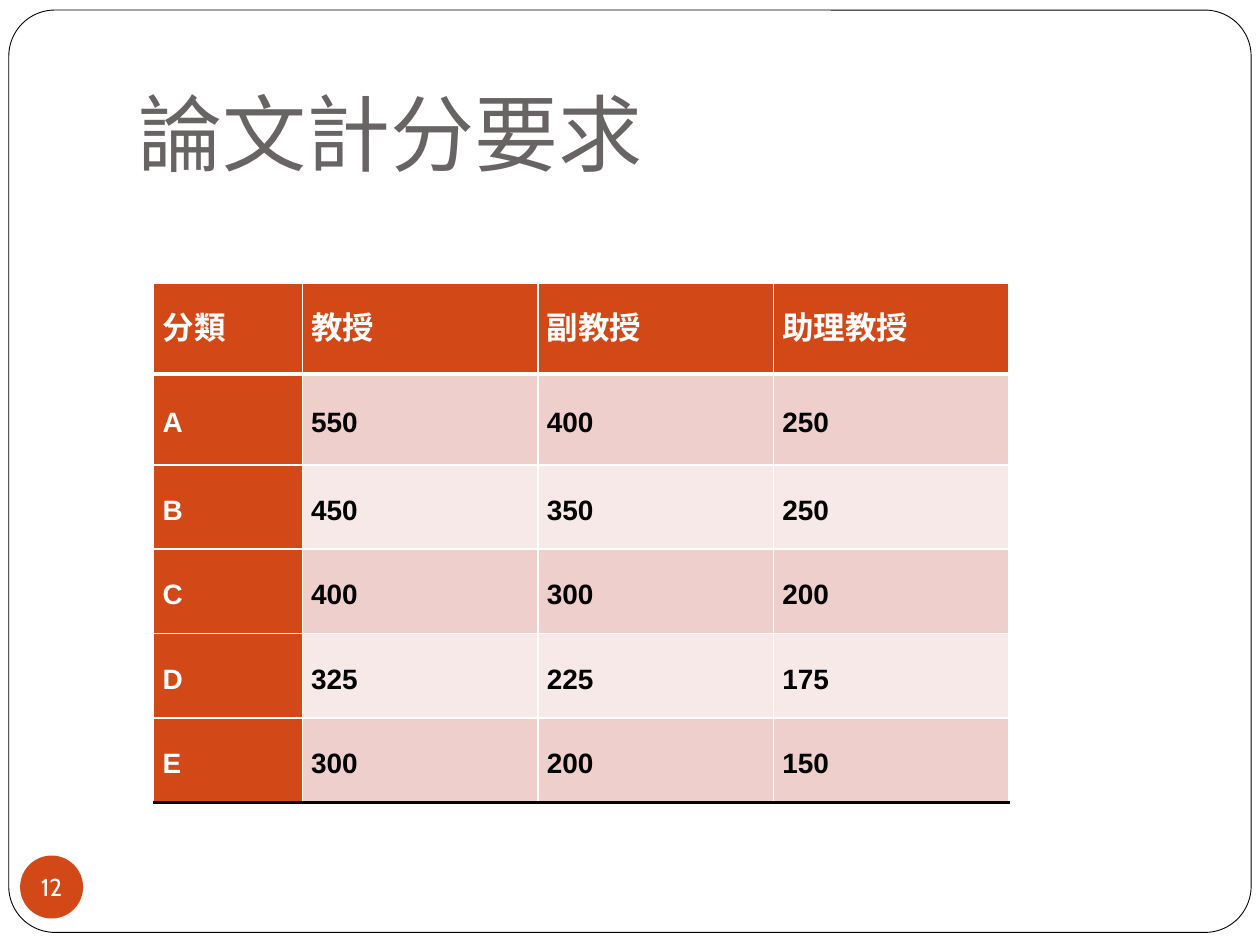
from dataclasses import dataclass

from lxml import etree
from pptx import Presentation, util as u
from pptx.dml.color import RGBColor
from pptx.enum import shapes, text
from pptx.oxml import ns


@dataclass(frozen=True)
class Theme:
    white: str = "FFFFFF"
    black: str = "000000"
    grey: str = "696464"
    accent: str = "D34817"
    bands: tuple = ("EFCFCC", "F7E9E8")
    heading_font: str = "Cabin"
    table_font: str = "Arial"
    title_size: int = 48
    header_size: int = 18
    body_size: int = 16
    number_size: int = 14
    line_spacing: int = 22
    thin: float = 1
    closing: float = 1.5
    thick: float = 3


THEME = Theme()
SCORES = [
    ("分類", "教授", "副教授", "助理教授"),
    ("A", 550, 400, 250),
    ("B", 450, 350, 250),
    ("C", 400, 300, 200),
    ("D", 325, 225, 175),
    ("E", 300, 200, 150),
]
COLUMN_WIDTHS = (1.18, 1.87, 1.87, 1.87)
ROW_HEIGHTS = (0.72, 0.72, 0.67, 0.67, 0.67, 0.67)


def inches(box):
    return [u.Inches(length) for length in box]


def apply(target, values):
    for name, value in values.items():
        setattr(target, name, value)


def margins(left, top, right, bottom):
    names = ("margin_left", "margin_top", "margin_right", "margin_bottom")
    return dict(zip(names, inches((left, top, right, bottom))))


def paint(fill, color):
    fill.solid()
    fill.fore_color.rgb = RGBColor.from_string(color)


def write(frame, words, size, color, font, align, bold=False, spacing=None):
    """Fill a text frame with one paragraph in one format."""
    para = frame.paragraphs[0]
    apply(para, {"alignment": align, "line_spacing": spacing})
    span = para.add_run()
    span.text = str(words)
    apply(span.font, {"size": u.Pt(size), "name": font, "bold": bold})
    span.font.color.rgb = RGBColor.from_string(color)


def add_frame(page, box):
    """Place the rounded page border behind the title."""
    border = page.shapes.add_shape(
        shapes.MSO_SHAPE.ROUNDED_RECTANGLE, *inches(box))
    border.adjustments[0] = 0.05
    border.shadow.inherit = False
    paint(border.fill, THEME.white)
    paint(border.line.fill, THEME.black)
    border.line.width = u.Pt(0.5)
    page.shapes.title.element.addprevious(border.element)


def add_title(page, box, words):
    title = page.shapes.title
    apply(title, dict(zip(("left", "top", "width", "height"), inches(box))))
    apply(title.text_frame, {
        "vertical_anchor": text.MSO_ANCHOR.BOTTOM,
        "auto_size": text.MSO_AUTO_SIZE.NONE,
        "word_wrap": True,
        **margins(0.1, 0.05, 0.1, 0.1),
    })
    write(title.text_frame, words, THEME.title_size, THEME.grey,
          THEME.heading_font, text.PP_ALIGN.LEFT)


def add_page_number(page, box, number):
    badge = page.shapes.add_shape(shapes.MSO_SHAPE.OVAL, *inches(box))
    badge.shadow.inherit = False
    paint(badge.fill, THEME.accent)
    badge.line.fill.background()
    apply(badge.text_frame, {
        "vertical_anchor": text.MSO_ANCHOR.MIDDLE,
        "word_wrap": False,
        **margins(0, 0, 0, 0),
    })
    write(badge.text_frame, number, THEME.number_size, THEME.white,
          THEME.heading_font, text.PP_ALIGN.CENTER)


def set_borders(cell, top, bottom):
    """Draw the four edges; top and bottom are (colour, points) pairs."""
    side = (THEME.white, THEME.thin)
    properties = cell._tc.get_or_add_tcPr()
    edges = {"a:lnL": side, "a:lnR": side, "a:lnT": top, "a:lnB": bottom}
    for tag, (color, width) in edges.items():
        line = etree.SubElement(properties, ns.qn(tag), w=str(u.Pt(width)))
        fill = etree.SubElement(line, ns.qn("a:solidFill"))
        etree.SubElement(fill, ns.qn("a:srgbClr"), val=color)


def add_score_table(page, box, scores):
    table = page.shapes.add_table(
        len(scores), len(scores[0]), *inches(box)).table
    for column, width in zip(table.columns, COLUMN_WIDTHS):
        column.width = u.Inches(width)
    for row, height in zip(table.rows, ROW_HEIGHTS):
        row.height = u.Inches(height)

    # One rule above each row, plus the closing rule below the last.
    rules = [(THEME.white, THEME.thin)] * len(scores)
    rules[1] = (THEME.white, THEME.thick)
    rules.append((THEME.black, THEME.closing))

    for r, values in enumerate(scores):
        for c, value in enumerate(values):
            cell = table.cell(r, c)
            heading = r == 0 or c == 0
            apply(cell, {
                "vertical_anchor": text.MSO_ANCHOR.MIDDLE,
                **margins(0.07, 0, 0.07, 0),
            })
            set_borders(cell, rules[r], rules[r + 1])
            paint(cell.fill,
                  THEME.accent if heading else THEME.bands[(r - 1) % 2])
            write(cell.text_frame, value,
                  THEME.body_size if r else THEME.header_size,
                  THEME.white if heading else THEME.black,
                  THEME.table_font, text.PP_ALIGN.LEFT, bold=True,
                  spacing=u.Pt(THEME.line_spacing))


def main():
    deck = Presentation()
    deck.slide_width, deck.slide_height = inches((10, 7.5))
    page = deck.slides.add_slide(deck.slide_layouts.get_by_name("Title Only"))
    add_frame(page, (0.07, 0.08, 9.86, 7.32))
    add_title(page, (1, 0.3, 8.5, 1.25), "論文計分要求")
    add_page_number(page, (0.16, 6.79, 0.5, 0.5), 12)
    add_score_table(
        page, (1.22, 2.25, sum(COLUMN_WIDTHS), sum(ROW_HEIGHTS)), SCORES)
    deck.save("out.pptx")


if __name__ == "__main__":
    main()
